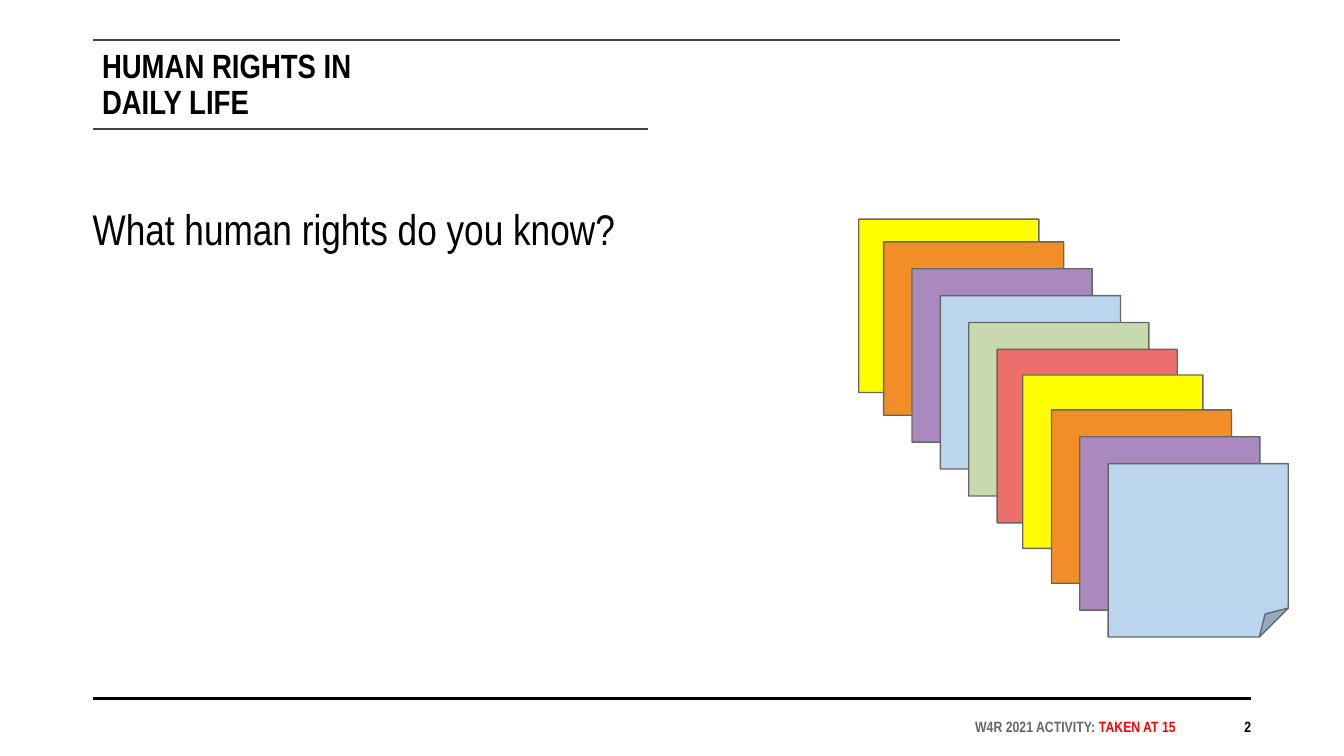
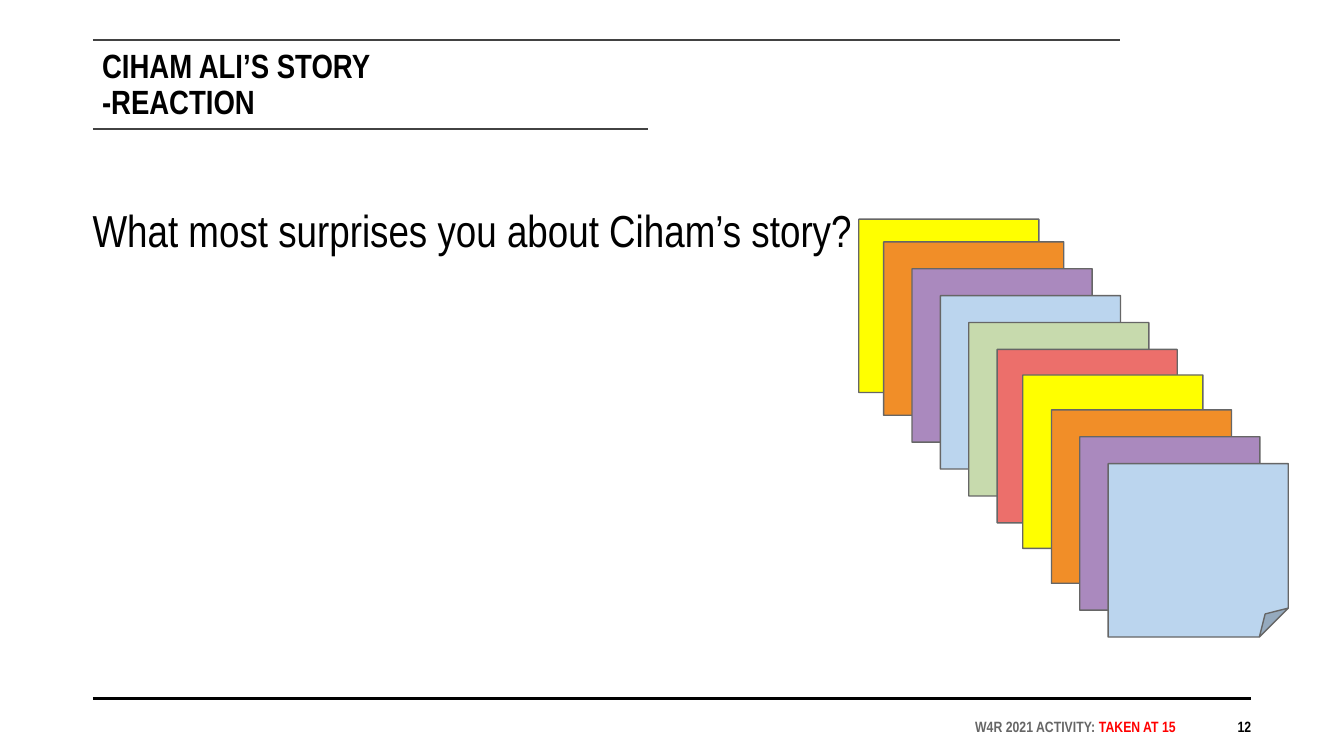
from lxml.etree import SubElement
from pptx import Presentation
from pptx.dml.color import RGBColor
from pptx.enum.shapes import MSO_CONNECTOR, MSO_SHAPE
from pptx.enum.text import MSO_ANCHOR, PP_ALIGN
from pptx.oxml.ns import qn
from pptx.util import Pt

BLACK = RGBColor(0x00, 0x00, 0x00)
RULE = RGBColor(0x42, 0x42, 0x42)
GREY = RGBColor(0x66, 0x66, 0x66)
RED = RGBColor(0xFF, 0x00, 0x00)
YELLOW = RGBColor(0xFF, 0xFF, 0x00)
ORANGE = RGBColor(0xF1, 0x8E, 0x28)
PURPLE = RGBColor(0xAA, 0x89, 0xBE)
BLUE = RGBColor(0xBB, 0xD5, 0xEE)
GREEN = RGBColor(0xC7, 0xDA, 0xAD)
CORAL = RGBColor(0xEC, 0x6F, 0x6B)

FONT = "Arial Narrow"
TITLE_BOX = (49.7, 21.6, 550.3, 47.5)
QUESTION_BOX = (42.5, 97.2, 550.8, 223)
NOTES_BOX = (460.1, 117.4, 230.2, 224)
FOOTER_BOX = (49.7, 374.4, 620.6, 20)

NOTE_W, NOTE_H = 96.5, 92.9
NOTE_STEP = (15.2, 14.4)
# Each run of notes: offset of its first note in the box, then its colours
NOTE_RUNS = [
    ((0, 0), [YELLOW]),
    ((13.3, 12.2), [ORANGE, PURPLE, BLUE, GREEN, CORAL]),
    ((87.8, 83.5), [YELLOW]),
    ((103.2, 102.2), [ORANGE, PURPLE, BLUE]),
]

SLIDES = [
    # "\v" breaks a line, "\n" starts a paragraph
    ("HUMAN RIGHTS IN\vDAILY LIFE", "What human rights do you know?", 23, "2"),
    ("CIHAM ALI’S STORY\n-REACTION",
     "What most surprises you about Ciham’s story?", 24, "12"),
]


def add_rule(s, x, y, width, color, weight):
    line = s.shapes.add_connector(
        MSO_CONNECTOR.STRAIGHT, Pt(x), Pt(y), Pt(x + width), Pt(y))
    line.line.color.rgb = color
    line.line.width = Pt(weight)
    SubElement(line._element.spPr, qn("a:effectLst"))


def format_runs(runs, size, bold=False, color=BLACK):
    for r in runs:
        for name, value in {"name": FONT, "size": Pt(size), "bold": bold}.items():
            setattr(r.font, name, value)
        r.font.color.rgb = color


def add_text(s, box, text, size, insets=(0, 0), bold=False, spacing=None,
             align=PP_ALIGN.LEFT, anchor=MSO_ANCHOR.TOP):
    """Add a text box; insets are (left and right, top and bottom)."""
    tf = s.shapes.add_textbox(*map(Pt, box)).text_frame
    side, end = map(Pt, insets)
    frame = {"margin_left": side, "margin_right": side, "margin_top": end,
             "margin_bottom": end, "word_wrap": True, "vertical_anchor": anchor}
    for name, value in frame.items():
        setattr(tf, name, value)
    tf.text = text
    for p in tf.paragraphs:
        p.alignment = align
        p.line_spacing = spacing
        format_runs(p.runs, size, bold)
    return tf


def add_title(s, box, title):
    x, y, width, height = box
    add_rule(s, x, y, width, RULE, 1)
    add_rule(s, x, y + height, 297.4, RULE, 1)
    add_text(s, (x, y + 5, 244, 37.4), title, 18, (5, 0), True, 0.9)


def add_notes(s, box):
    """Cascade the sticky notes down and to the right."""
    x, y = box[:2]
    for (left, top), colors in NOTE_RUNS:
        for i, color in enumerate(colors):
            note = s.shapes.add_shape(
                MSO_SHAPE.FOLDED_CORNER,
                Pt(x + left + i * NOTE_STEP[0]), Pt(y + top + i * NOTE_STEP[1]),
                Pt(NOTE_W), Pt(NOTE_H))
            note.shadow.inherit = False
            note.fill.solid()
            note.fill.fore_color.rgb = color
            note.line.color.rgb = GREY
            note.line.width = Pt(0.75)


def add_footer(s, box, number):
    x, y, width, height = box
    add_rule(s, x, y, width, BLACK, 1.5)
    style = {"size": 8, "bold": True, "align": PP_ALIGN.RIGHT,
             "anchor": MSO_ANCHOR.BOTTOM}
    tf = add_text(s, (x + 362.2, y + 7.2, 218.1, 12.2),
                  "W4R 2021 ACTIVITY: ", **style)
    p = tf.paragraphs[0]
    format_runs(p.runs, 8, True, GREY)
    r = p.add_run()
    r.text = "TAKEN AT 15"
    format_runs([r], 8, True, RED)
    add_text(s, (x + width - 36, y + height - 8.4, 36, 8), number, **style)


def add_question_slide(prs, title, question, size, number):
    s = prs.slides.add_slide(prs.slide_layouts[6])
    add_footer(s, FOOTER_BOX, number)
    add_title(s, TITLE_BOX, title)
    add_text(s, QUESTION_BOX, question, size, (7.2, 7.2), spacing=1.15)
    add_notes(s, NOTES_BOX)


def main():
    prs = Presentation()
    prs.slide_width, prs.slide_height = Pt(720), Pt(405)
    for content in SLIDES:
        add_question_slide(prs, *content)
    prs.save("out.pptx")


if __name__ == "__main__":
    main()
